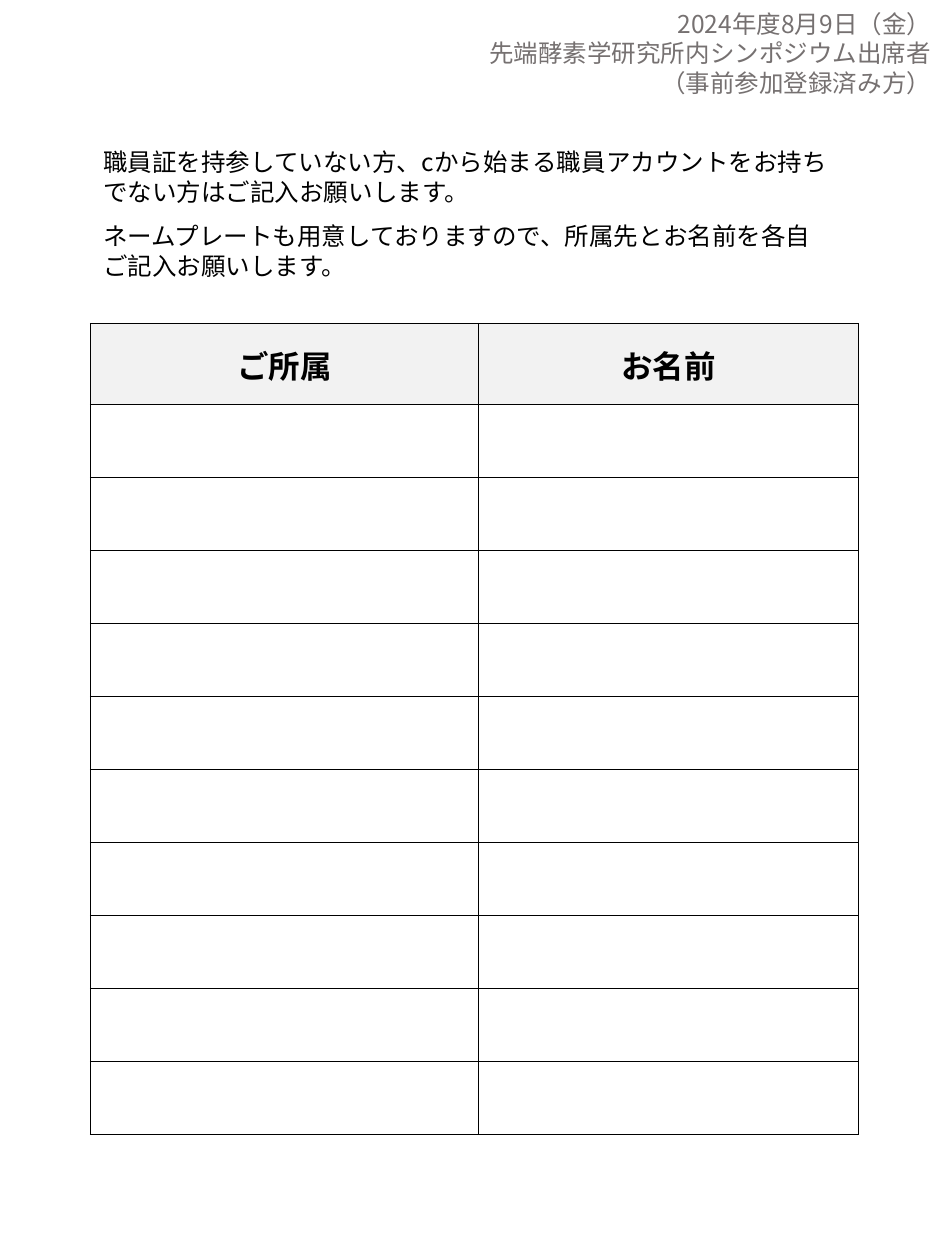
from pptx import Presentation
from pptx.dml.color import RGBColor as Rgb
from pptx.enum.text import MSO_ANCHOR as Anchor, PP_ALIGN as Align
from pptx.oxml.ns import qn
from pptx.util import Pt
from lxml.etree import SubElement as Sub

FONT = "Noto Sans CJK JP"
DATE = ["2024年度8月9日（金）",
        "先端酵素学研究所内シンポジウム出席者（事前参加登録済み方）"]
NOTE = ["職員証を持参していない方、cから始まる職員アカウントをお持ちでない方はご記入お願いします。",
        "ネームプレートも用意しておりますので、所属先とお名前を各自ご記入お願いします。"]
HEADS = ["ご所属", "お名前"]
COLS = [221.5, 217.3]
ROWS = [46.1] + [41.75] * 10


def color(code):
    return Rgb.from_string(code)


def assign(item, vals):
    for name, val in vals.items():
        setattr(item, name, val)


def write(para, text, size, code, bold=False, **form):
    assign(para, form)
    run = para.add_run()
    run.text = text
    assign(run.font, {"name": FONT, "size": Pt(size), "bold": bold})
    run.font.color.rgb = color(code)
    Sub(run.font._element, qn("a:ea"), typeface=FONT)


def add_text(slide, box, lines, code, align, gap=0):
    frame = slide.shapes.add_textbox(*map(Pt, box)).text_frame
    frame.word_wrap = True
    for i, line in enumerate(lines):
        para = frame.add_paragraph() if i else frame.paragraphs[0]
        write(para, line, 14, code, alignment=align, line_spacing=Pt(16.9),
              space_before=Pt(gap if i else 0))


def add_edges(cell):
    props = cell._tc.get_or_add_tcPr()
    for i, side in enumerate(["lnL", "lnR", "lnT", "lnB"]):
        edge = props.makeelement(qn(f"a:{side}"), {"w": str(Pt(1))})
        fill = Sub(edge, qn("a:solidFill"))
        Sub(fill, qn("a:srgbClr"), val="000000")
        props.insert(i, edge)


def add_grid(slide, left, top):
    box = map(Pt, (left, top, sum(COLS), sum(ROWS)))
    grid = slide.shapes.add_table(len(ROWS), len(COLS), *box).table
    for col, width in zip(grid.columns, COLS):
        col.width = Pt(width)
    for row, height in zip(grid.rows, ROWS):
        row.height = Pt(height)
    for cell in grid.iter_cells():
        cell.fill.background()
        add_edges(cell)
    for cell, text in zip(grid.rows[0].cells, HEADS):
        cell.fill.solid()
        cell.fill.fore_color.rgb = color("F2F2F2")
        assign(cell, {"vertical_anchor": Anchor.MIDDLE,
                      "margin_left": Pt(0.7), "margin_right": Pt(0.7),
                      "margin_top": Pt(0.7), "margin_bottom": Pt(0)})
        write(cell.text_frame.paragraphs[0], text, 18, "000000", True,
              alignment=Align.CENTER)


def main():
    deck = Presentation()
    assign(deck, {"slide_width": Pt(540), "slide_height": Pt(720)})
    slide = deck.slides.add_slide(deck.slide_layouts[6])
    add_text(slide, (252, 1.4, 287.3, 58.3), DATE, "767171", Align.RIGHT)
    add_grid(slide, 51.8, 185)
    add_text(slide, (51.8, 80.6, 431.3, 83.5), NOTE, "000000", Align.LEFT, 8.4)
    deck.save("out.pptx")


if __name__ == "__main__":
    main()
